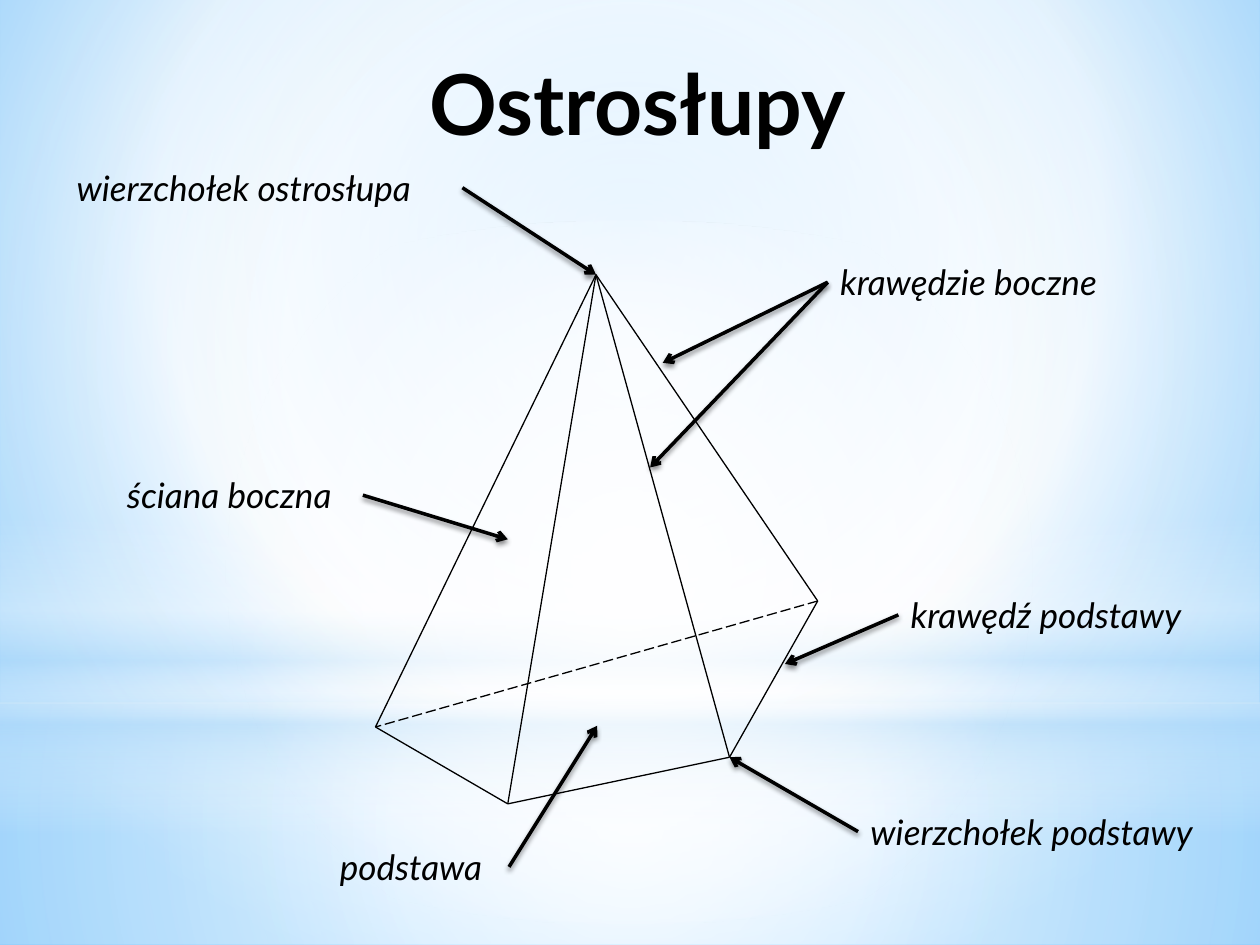
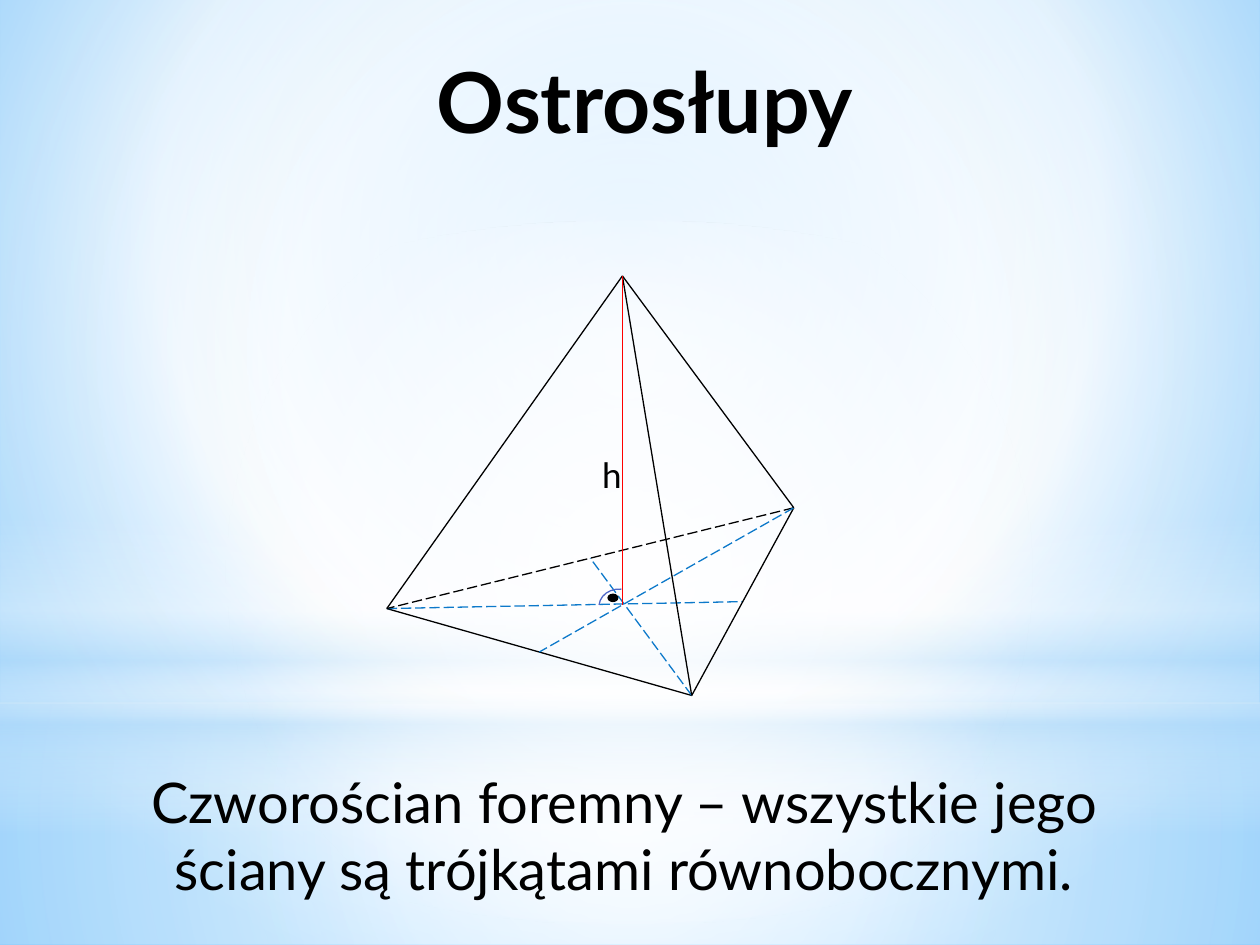
from pptx import Presentation, util as u
from pptx.dml.color import RGBColor
from pptx.enum import dml, shapes, text
from pptx.oxml import parse_xml
from pptx.oxml.ns import nsdecls, qn

COLORS = {
    "black": "000000", "white": "FFFFFF", "sky": "9ED5FF", "edge": "5BB9FF",
    "pale": "B4DCFA", "median": "0D79CA", "height": "FF0000", "angle": "4E67C8",
}
FONT = "Lato"


def write(sp, content, size=20, bold=False, italic=False, align=None, wrap=True):
    """Fill a box with one paragraph and return the box."""
    tf = sp.text_frame
    tf.word_wrap = wrap
    tf.auto_size = text.MSO_AUTO_SIZE.SHAPE_TO_FIT_TEXT
    tf.vertical_anchor = text.MSO_ANCHOR.TOP
    p = tf.paragraphs[0]
    p.alignment = align
    r = p.add_run()
    r.text = content
    r.font.name, r.font.size = FONT, u.Pt(size)
    r.font.bold, r.font.italic = bold, italic
    r.font.color.rgb = RGBColor.from_string(COLORS["black"])
    return sp


def draw_line(tree, start, end, color="black", dashed=False, arrow=False):
    """Draw a thin edge, or a thick arrow with a soft shadow."""
    cx = tree.add_connector(shapes.MSO_CONNECTOR.STRAIGHT,
                            *[u.Inches(v) for v in (*start, *end)])
    cx.line.color.rgb = RGBColor.from_string(COLORS[color])
    cx.line.width = u.Pt(2 if arrow else 0.75)
    if dashed:
        cx.line.dash_style = dml.MSO_LINE.LONG_DASH
    shadow = ""
    if arrow:
        cx.element.spPr.find(qn("a:ln")).append(
            parse_xml(f'<a:tailEnd {nsdecls("a")} type="arrow"/>'))
        shadow = (f'<a:outerShdw blurRad="{u.Pt(3.1)}" dist="{u.Pt(1.8)}" dir="5400000" '
                  f'rotWithShape="0"><a:srgbClr val="{COLORS["black"]}">'
                  '<a:alpha val="45000"/></a:srgbClr></a:outerShdw>')
    cx.element.spPr.append(
        parse_xml(f'<a:effectLst {nsdecls("a")}>{shadow}</a:effectLst>'))
    return cx


prs = Presentation()
prs.slide_width, prs.slide_height = u.Inches(10), u.Inches(7.5)
master = prs.slide_master
title_only = prs.slide_layouts[5]
center = text.PP_ALIGN.CENTER

# Slides and titles
slides = []
for left, top, width, wrap in ((3.29, 0.36, 3.54, False), (1.3, 0.34, 7.64, True)):
    s = prs.slides.add_slide(title_only)
    title = s.shapes.title
    title.left, title.top = u.Inches(left), u.Inches(top)
    title.width, title.height = u.Inches(width), u.Inches(0.91)
    write(title, "Ostrosłupy", size=48, bold=True, align=center, wrap=wrap)
    slides.append(s)
parts_slide, tetrahedron_slide = slides

# Shared backdrop on the master: stops are (position, colour, opacity)
rect, oval = shapes.MSO_SHAPE.RECTANGLE, shapes.MSO_SHAPE.OVAL
middle = (50, 50, 50, 50)
backdrop = [
    (None, None, (20, 10, 20, 60),
     [(0, "sky", 100), (60, "white", 100), (100, "edge", 100)]),
    (rect, (0, 5.58, 10, 1.92), middle,
     [(0, "white", 91), (37, "white", 76), (100, "pale", 79)]),
    (rect, (0, 0, 10, 5.58), middle,
     [(0, "white", 89), (48, "white", 62), (100, "pale", 79)]),
    (rect, (0, 4.12, 10, 2.5), None,
     [(0, "white", 0), (29, "white", 30), (45, "pale", 40),
      (55, "white", 26), (65, "pale", 60), (100, "white", 0)]),
    (oval, (0, 1.75, 10, 5.58), middle, [(0, "white", 100), (56, "white", 0)]),
]
for i, (kind, box, focus, stops) in enumerate(backdrop):
    if kind is None:
        master.background.fill.gradient()
        owner = master.element
    else:
        sp = parts_slide.shapes.add_shape(kind, *[u.Inches(v) for v in box])
        sp.shadow.inherit = False
        sp.line.fill.background()
        sp.fill.gradient()
        owner = sp.element
        owner.nvSpPr.cNvPr.set("id", str(100 + i))
        master.shapes.element.insert(1 + i, owner)
    stop_xml = "".join(
        f'<a:gs pos="{pos * 1000}"><a:srgbClr val="{COLORS[name]}">'
        f'<a:alpha val="{opacity * 1000}"/></a:srgbClr></a:gs>'
        for pos, name, opacity in stops)
    if focus:
        sides = " ".join(f'{side}="{v * 1000}"' for side, v in zip("ltrb", focus))
        direction = f'<a:path path="circle"><a:fillToRect {sides}/></a:path>'
    else:
        direction = '<a:lin ang="5400000" scaled="0"/>'
    gradient = next(owner.iter(qn("a:gradFill")))
    gradient.getparent().replace(gradient, parse_xml(
        f'<a:gradFill {nsdecls("a")} rotWithShape="1">'
        f'<a:gsLst>{stop_xml}</a:gsLst>{direction}</a:gradFill>'))

# Slide 1: pyramid with a four-sided base
apex = (4.73, 2.18)
base = [(2.98, 5.77), (4.03, 6.38), (5.79, 6.01), (6.49, 4.77)]
pyramid = parts_slide.shapes.add_group_shape().shapes
for i, corner in enumerate(base):
    draw_line(pyramid, corner, base[(i + 1) % 4], dashed=i == 3)
    draw_line(pyramid, corner, apex)

# Labels: text, box, connection side, arrow tips
LEFT, RIGHT = 1, 3
labels = [
    ("wierzchołek ostrosłupa", 0.51, 1.27, 3.16, RIGHT, [apex]),
    ("ściana boczna", 0.91, 3.71, 1.97, RIGHT, [(4.03, 4.28)]),
    ("podstawa", 2.6, 6.66, 1.44, RIGHT, [(4.74, 5.76)]),
    ("wierzchołek podstawy", 6.81, 6.38, 3.07, LEFT, [base[2]]),
    ("krawędzie boczne", 6.57, 2.02, 2.44, LEFT, [(5.16, 3.71), (5.26, 2.88)]),
    ("krawędź podstawy", 7.13, 4.66, 2.76, LEFT, [(6.23, 5.27)]),
]
for content, left, top, width, side, tips in labels:
    label = write(parts_slide.shapes.add_textbox(
        u.Inches(left), u.Inches(top), u.Inches(width), u.Inches(0.44)),
        content, italic=True)
    start = (left + width if side == RIGHT else left, top + 0.22)
    for tip in tips:
        arrow = draw_line(parts_slide.shapes, start, tip, arrow=True)
        arrow.begin_connect(label, side)

# Slide 2: tetrahedron with base medians and height
write(tetrahedron_slide.shapes.add_textbox(
    u.Inches(0.57), u.Inches(6.04), u.Inches(8.77), u.Inches(1.18)),
    "Czworościan foremny – wszystkie jego ściany są trójkątami równobocznymi.",
    size=32, align=center)
apex, foot = (4.94, 2.19), (4.94, 4.8)
base = [(3.07, 4.83), (5.49, 5.52), (6.3, 4.03)]
solid = tetrahedron_slide.shapes.add_group_shape().shapes
for i, corner in enumerate(base):
    following, opposite = base[(i + 1) % 3], base[(i + 2) % 3]
    midpoint = [(a + b) / 2 for a, b in zip(following, opposite)]
    draw_line(solid, corner, following, dashed=i == 2)
    draw_line(solid, corner, midpoint, color="median", dashed=True)
    draw_line(solid, corner, apex)
draw_line(solid, foot, apex, color="height")

arc = solid.add_shape(shapes.MSO_SHAPE.ARC, u.Inches(4.78), u.Inches(4.65),
                      u.Inches(0.28), u.Inches(0.33))
arc.rotation = 274.8
arc.fill.background()
dot = solid.add_shape(oval, u.Inches(4.83), u.Inches(4.72), u.Inches(0.07), u.Inches(0.05))
dot.fill.solid()
dot.fill.fore_color.rgb = RGBColor.from_string(COLORS["black"])
for mark, color, weight in ((arc, "angle", 0.75), (dot, "black", 1.25)):
    mark.shadow.inherit = False
    mark.line.color.rgb = RGBColor.from_string(COLORS[color])
    mark.line.width = u.Pt(weight)
write(solid.add_textbox(u.Inches(4.68), u.Inches(3.55), u.Inches(0.35), u.Inches(0.44)),
      "h", wrap=False)

prs.save("out.pptx")
